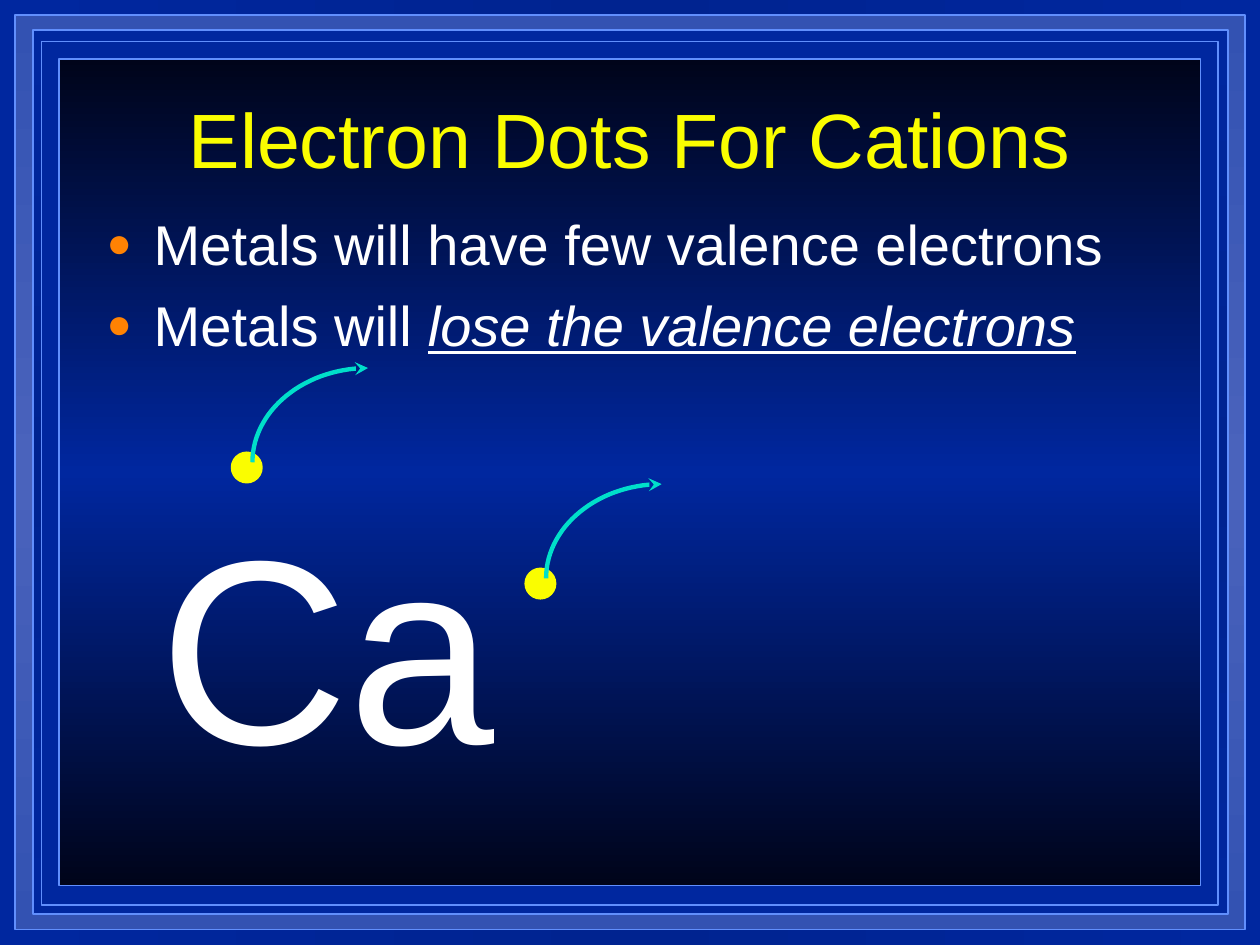
from dataclasses import dataclass

import pptx
import pptx.dml.color
import pptx.enum.dml
import pptx.enum.shapes
import pptx.enum.text
import pptx.oxml
import pptx.oxml.ns
import pptx.util
from copy import deepcopy
from pptx.util import Cm, Pt

FONT = "Arial"
NAVY, EDGE, YELLOW = "00279F", "618FFD", "FAFD00"
WHITE, ORANGE, TEAL = "FFFFFF", "FF8203", "00DFCA"
NS = 'xmlns:a="http://schemas.openxmlformats.org/drawingml/2006/main"'
CURVE_STEPS = 30


@dataclass
class Frame:
    left: float
    top: float
    width: float
    height: float
    end_color: str
    middle_color: str


@dataclass
class Electron:
    left: float
    top: float


FRAMES = [
    Frame(0.30, 0.30, 24.80, 18.44, "3352B2", "4A63BC"),
    Frame(0.66, 0.61, 24.10, 17.81, NAVY, "002390"),
    Frame(0.84, 0.84, 23.72, 17.40, NAVY, NAVY),
    Frame(1.19, 1.19, 23.01, 16.66, "00041A", NAVY),
]
ELECTRONS = [Electron(4.67, 9.12), Electron(10.59, 11.46)]


def rgb(color: str) -> pptx.dml.color.RGBColor:
    return pptx.dml.color.RGBColor.from_string(color)


def set_gradient(fill, element, end_color: str, middle_color: str, angle: int) -> None:
    """Symmetrical three-stop gradient; element holds the fill."""
    fill.gradient()
    fill.gradient_angle = angle
    stop_list = next(element.iter(pptx.oxml.ns.qn("a:gsLst")))
    stop_list.insert(1, deepcopy(stop_list[0]))
    colors = (end_color, middle_color, end_color)
    for stop, color, position in zip(fill.gradient_stops, colors, (0, 0.5, 1)):
        stop.color.rgb = rgb(color)
        stop.position = position


def style_line(shape, color: str, width: float) -> None:
    shape.shadow.inherit = False
    shape.line.color.rgb = rgb(color)
    shape.line.width = Pt(width)


def add_frame(slide, frame: Frame) -> None:
    shape = slide.shapes.add_shape(
        pptx.enum.shapes.MSO_SHAPE.RECTANGLE,
        Cm(frame.left), Cm(frame.top), Cm(frame.width), Cm(frame.height))
    set_gradient(shape.fill, shape._element, frame.end_color, frame.middle_color, 90)
    style_line(shape, EDGE, 1)


def add_text_box(slide, left: float, top: float, width: float, height: float):
    text_frame = slide.shapes.add_textbox(
        Cm(left), Cm(top), Cm(width), Cm(height)).text_frame
    text_frame.word_wrap = True
    return text_frame


def set_font(paragraph, size: float, color: str) -> None:
    paragraph.font.name = FONT
    paragraph.font.size = Pt(size)
    paragraph.font.color.rgb = rgb(color)


def add_bullet(paragraph) -> None:
    properties = paragraph._p.get_or_add_pPr()
    properties.set("marL", str(Cm(0.95)))
    properties.set("indent", str(-Cm(0.95)))
    for markup in (
        f'<a:buClr {NS}><a:srgbClr val="{ORANGE}"/></a:buClr>',
        f'<a:buSzPct {NS} val="75000"/>',
        f'<a:buFont {NS} typeface="{FONT}"/>',
        f'<a:buChar {NS} char="●"/>',
    ):
        properties.append(pptx.oxml.parse_xml(markup))


def add_electron(slide, electron: Electron) -> None:
    diameter = Cm(0.61)
    dot = slide.shapes.add_shape(
        pptx.enum.shapes.MSO_SHAPE.OVAL,
        Cm(electron.left), Cm(electron.top), diameter, diameter)
    dot.fill.solid()
    dot.fill.fore_color.rgb = rgb(YELLOW)
    style_line(dot, YELLOW, 1)


def add_leaving_arrow(slide, electron: Electron) -> None:
    """Quarter ellipse that rises from the electron and turns right."""
    left, bottom = electron.left + 0.42, electron.top + 0.20
    width, height = 2.33, 1.90
    bend = 0.55
    points = []
    for step in range(CURVE_STEPS + 1):
        t = step / CURVE_STEPS
        x = 3 * (1 - t) * t**2 * (1 - bend) + t**3
        y = 3 * (1 - t)**2 * t * bend + 3 * (1 - t) * t**2 + t**3
        points.append((Cm(left + width * x), Cm(bottom - height * y)))
    builder = slide.shapes.build_freeform(*points[0])
    builder.add_line_segments(points[1:], close=False)
    arrow = builder.convert_to_shape()
    arrow.fill.background()
    style_line(arrow, TEAL, 2.5)
    arrow.line._get_or_add_ln().append(
        pptx.oxml.parse_xml(f'<a:tailEnd {NS} type="stealth"/>'))


def main() -> None:
    presentation = pptx.Presentation()
    presentation.slide_width, presentation.slide_height = Cm(25.4), Cm(19.05)
    slide = presentation.slides.add_slide(presentation.slide_layouts[6])

    # Background and nested frames
    set_gradient(slide.background.fill, slide._element, NAVY, "002390", 0)
    for frame in FRAMES:
        add_frame(slide, frame)

    # Title
    title = add_text_box(slide, 1.9, 1.74, 21.6, 2.1)
    title.vertical_anchor = pptx.enum.text.MSO_ANCHOR.BOTTOM
    paragraph = title.paragraphs[0]
    paragraph.text = "Electron Dots For Cations"
    paragraph.alignment = pptx.enum.text.PP_ALIGN.CENTER
    set_font(paragraph, 44, YELLOW)

    # Bullets
    body = add_text_box(slide, 1.9, 4.1, 21.8, 5.08)
    first = body.paragraphs[0]
    first.text = "Metals will have few valence electrons"
    second = body.add_paragraph()
    second.add_run().text = "Metals will "
    emphasis = second.add_run()
    emphasis.text = "lose the valence electrons"
    emphasis.font.italic = True
    emphasis.font.underline = True
    second.space_before = Pt(8)
    for paragraph in body.paragraphs:
        add_bullet(paragraph)
        set_font(paragraph, 32, WHITE)

    # Calcium symbol
    symbol = add_text_box(slide, 2.96, 9.6, 7.4, 6.4)
    symbol.paragraphs[0].text = "Ca"
    set_font(symbol.paragraphs[0], 150, WHITE)

    # Valence electrons and the arrows that carry them off
    for electron in ELECTRONS:
        add_electron(slide, electron)
    for electron in ELECTRONS:
        add_leaving_arrow(slide, electron)

    presentation.save("out.pptx")


if __name__ == "__main__":
    main()
